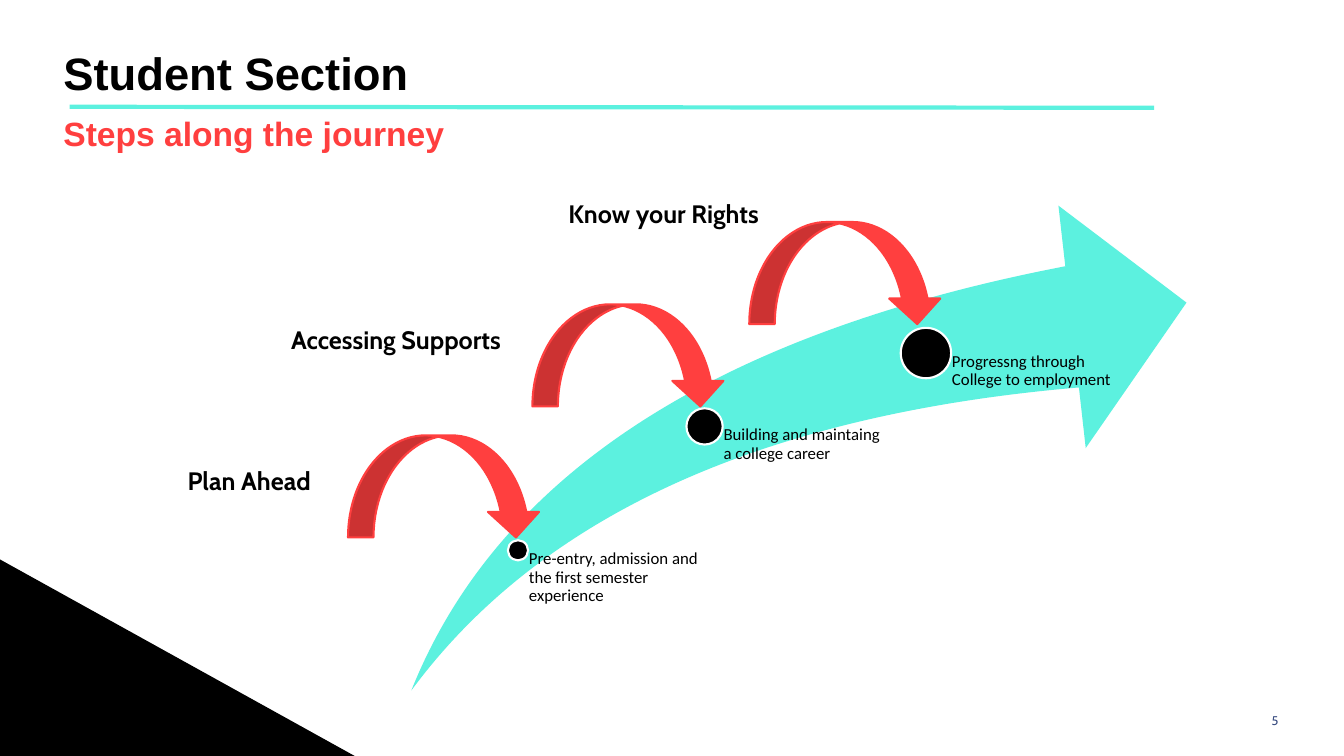
from pptx import Presentation
from pptx.dml.color import RGBColor
from pptx.enum.shapes import MSO_CONNECTOR, MSO_SHAPE
from pptx.enum.text import MSO_ANCHOR, PP_ALIGN
from pptx.oxml.ns import qn
from pptx.util import Pt
from lxml import etree

LINE = MSO_CONNECTOR.STRAIGHT
OVAL = MSO_SHAPE.OVAL
SWOOSH = MSO_SHAPE.SWOOSH_ARROW
CURVED = MSO_SHAPE.CURVED_DOWN_ARROW
TOP, MIDDLE = MSO_ANCHOR.TOP, MSO_ANCHOR.MIDDLE
LEFT, RIGHT = PP_ALIGN.LEFT, PP_ALIGN.RIGHT

COLORS = {
    "black": "000000",
    "white": "FFFFFF",
    "aqua": "5CF1DF",
    "red": "FF3F3F",
    "navy": "384C81",
}


class SlideBuilder:
    def __init__(self, slide):
        self.shapes = slide.shapes

    def color(self, name):
        return RGBColor.from_string(COLORS[name])

    def paint(self, sp, fill, line=None, weight=1.5):
        sp.shadow.inherit = False
        sp.fill.solid()
        sp.fill.fore_color.rgb = self.color(fill)
        if line:
            sp.line.color.rgb = self.color(line)
            sp.line.width = Pt(weight)
        else:
            sp.line.fill.background()

    def shape(self, kind, x, y, w, h, fill, line=None, adjustments=()):
        sp = self.shapes.add_shape(kind, Pt(x), Pt(y), Pt(w), Pt(h))
        for i, value in enumerate(adjustments):
            sp.adjustments[i] = value
        self.paint(sp, fill, line)

    def polygon(self, points, fill):
        (x, y), *rest = [(Pt(px), Pt(py)) for px, py in points]
        builder = self.shapes.build_freeform(x, y)
        builder.add_line_segments(rest, close=True)
        self.paint(builder.convert_to_shape(), fill)

    def line(self, x1, y1, x2, y2, color, weight):
        cn = self.shapes.add_connector(LINE, Pt(x1), Pt(y1), Pt(x2), Pt(y2))
        cn.line.color.rgb = self.color(color)
        cn.line.width = Pt(weight)
        etree.SubElement(cn._element.spPr, qn("a:effectLst"))

    def text(self, text, x, y, w, h, size, font, color="black", bold=False,
             align=LEFT, anchor=TOP, insets=(7.2, 3.6, 7.2, 3.6), spacing=1):
        tf = self.shapes.add_textbox(Pt(x), Pt(y), Pt(w), Pt(h)).text_frame
        tf.word_wrap = True
        tf.vertical_anchor = anchor
        (tf.margin_left, tf.margin_top,
         tf.margin_right, tf.margin_bottom) = [Pt(v) for v in insets]
        p = tf.paragraphs[0]
        p.text = text
        p.alignment = align
        p.line_spacing = spacing
        p.font.size = Pt(size)
        p.font.name = font
        p.font.bold = bold
        p.font.color.rgb = self.color(color)


def main():
    prs = Presentation()
    prs.slide_width, prs.slide_height = Pt(960), Pt(540)
    s = SlideBuilder(prs.slides.add_slide(prs.slide_layouts[6]))

    # Corner, heading and slide number
    s.polygon([(0, 399.6), (0, 540), (253.4, 540)], "black")
    s.text("Student Section", 38.2, 27.4, 837.4, 49, 32.4, "Arial",
           bold=True, anchor=MIDDLE)
    s.text("5", 866.2, 500.4, 54, 28.8, 9, "Cabin", "navy",
           align=RIGHT, anchor=MIDDLE)
    s.line(49.7, 76.3, 824.4, 77, "aqua", 3)
    s.text("Steps along the journey", 38.2, 77, 664.6, 36, 24, "Arial",
           "red", bold=True)

    # Journey arrow
    bottom = 493.2
    s.shape(SWOOSH, 293.8, 146.9, 553.7, bottom - 146.9, "aqua",
            adjustments=(0.25, 0.25))

    # Milestones: centre, dot diameter, text width, text
    milestones = [
        (370, 393.1, 14.4, 128.9,
         "Pre-entry, admission and the first semester experience"),
        (503.3, 304.6, 25.9, 133.2,
         "Building and maintaing a college career"),
        (661.4, 252.2, 36, 133.2,
         "Progressng through College to employment"),
    ]
    for cx, cy, d, width, text in milestones:
        s.shape(OVAL, cx - d / 2, cy - d / 2, d, d, "black", "white")
        s.text(text, cx, cy, width, bottom - cy, 12, "Calibri",
               insets=(d / 2 + 0.6, 0, 0, 0), spacing=0.9)

    # Steps: label box, then the corner of its curved arrow
    steps = [
        ("Plan Ahead", 126.9, 329, 119.5, 248.6, 311),
        ("Accessing Supports", 200.9, 228.2, 188.6, 380.3, 217.4),
        ("Know your Rights", 398.9, 138.2, 171.4, 535.2, 158.6),
    ]
    for label, x, y, width, arrow_x, arrow_y in steps:
        s.shape(CURVED, arrow_x, arrow_y, 138.2, 72.9, "red", "red")
        s.text(label, x, y, width, 28.8, 18, "Cabin", bold=True)

    prs.save("out.pptx")


if __name__ == "__main__":
    main()
